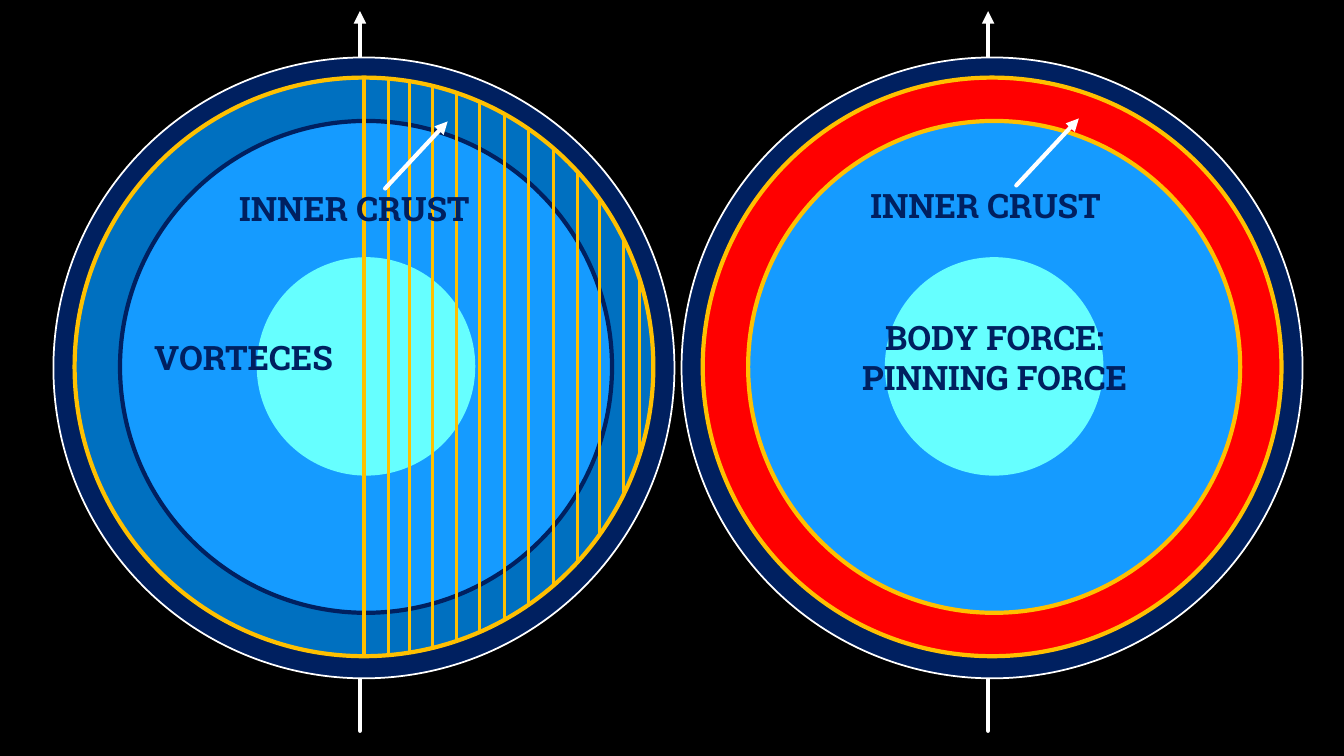
"""Build a slide comparing vortices and pinning force in a star's inner crust."""
import math
from dataclasses import dataclass

import pptx
import pptx.dml.color
import pptx.enum.dml
import pptx.enum.shapes
import pptx.enum.text
import pptx.oxml.ns
import pptx.oxml.xmlchemy
import pptx.slide
import pptx.util
from lxml import etree

COLOURS = {
    "space": "000000",
    "white": "FFFFFF",
    "navy": "002060",
    "crust": "0070C0",
    "force": "FF0000",
    "mantle": "159BFF",
    "core": "66FFFF",
    "gold": "FFC000",
}
CELL = pptx.util.Inches(0.01)
COLUMNS, ROWS = 1333, 750
LABEL_FONT = {"name": "Roboto Slab", "size": pptx.util.Pt(24), "bold": True}
LABEL_FRAME = {"word_wrap": True, "auto_size": pptx.enum.text.MSO_AUTO_SIZE.NONE}
CENTRE = pptx.enum.text.PP_ALIGN.CENTER
LEFT = pptx.enum.text.PP_ALIGN.LEFT
CRUST_CENTRE = (361, 364)
CRUST_RADIUS = 287
VORTEX_OFFSETS = (0, 24, 45, 68, 92, 115, 139, 163, 188, 212, 234, 257.5, 273)


@dataclass(frozen=True)
class Ring:
    column: float
    row: float
    diameter: float
    fill: str
    outline: str
    weight: float


@dataclass(frozen=True)
class Stroke:
    start: tuple[float, float]
    end: tuple[float, float]
    colour: str
    weight: float
    arrow: bool


@dataclass(frozen=True)
class Label:
    column: float
    row: float
    width: float
    height: float
    lines: tuple[str, ...]
    alignment: pptx.enum.text.PP_ALIGN


@dataclass(frozen=True)
class Star:
    shift: float
    crust_fill: str
    mantle_outline: str
    vortex_offsets: tuple[float, ...]
    caption: Label
    callout_shift: tuple[float, float]


STARS = (
    Star(0, "crust", "navy", VORTEX_OFFSETS,
         Label(143, 329, 229, 50, ("VORTECES",), LEFT), (0, 0)),
    Star(623, "force", "gold", (),
         Label(816, 309, 341, 91, ("BODY FORCE:", "PINNING FORCE"), CENTRE), (3, -3)),
)


def cells(*counts: float) -> list[int]:
    """Convert grid cells to slide lengths."""
    return [round(count * CELL) for count in counts]


def colour(name: str) -> pptx.dml.color.RGBColor:
    """Look up a named colour."""
    return pptx.dml.color.RGBColor.from_string(COLOURS[name])


def draw_ring(slide: pptx.slide.Slide, ring: Ring) -> None:
    """Draw one layer of a star."""
    layer = slide.shapes.add_shape(
        pptx.enum.shapes.MSO_SHAPE.OVAL,
        *cells(ring.column, ring.row, ring.diameter, ring.diameter))
    layer.shadow.inherit = False
    layer.fill.solid()
    layer.fill.fore_color.rgb = colour(ring.fill)
    layer.line.color.rgb = colour(ring.outline)
    layer.line.width = pptx.util.Pt(ring.weight)


def draw_stroke(slide: pptx.slide.Slide, stroke: Stroke) -> None:
    """Draw a straight line, with a round cap and head if it is an arrow."""
    connector = slide.shapes.add_connector(
        pptx.enum.shapes.MSO_CONNECTOR.STRAIGHT,
        *cells(*stroke.start, *stroke.end))
    connector.line.color.rgb = colour(stroke.colour)
    connector.line.width = pptx.util.Pt(stroke.weight)
    properties = connector.element.spPr
    if stroke.arrow:
        outline = properties.find(pptx.oxml.ns.qn("a:ln"))
        outline.set("cap", "rnd")
        etree.SubElement(outline, pptx.oxml.ns.qn("a:tailEnd"), type="triangle")
    etree.SubElement(properties, pptx.oxml.ns.qn("a:effectLst"))


def draw_label(slide: pptx.slide.Slide, label: Label) -> None:
    """Write a label, one paragraph per line."""
    frame = slide.shapes.add_textbox(
        *cells(label.column, label.row, label.width, label.height)).text_frame
    for attribute, value in LABEL_FRAME.items():
        setattr(frame, attribute, value)
    frame.text = "\n".join(label.lines)
    for paragraph in frame.paragraphs:
        paragraph.alignment = label.alignment
        for run in paragraph.runs:
            for attribute, value in LABEL_FONT.items():
                setattr(run.font, attribute, value)
            run.font.color.rgb = colour("navy")


def draw_star(slide: pptx.slide.Slide, star: Star) -> None:
    """Draw the axis, layers, vortices and labels of one star."""
    shift = star.shift
    axis = 357 + shift
    draw_stroke(slide, Stroke((axis, 725), (axis, 11), "white", 3, True))
    for ring in (
        Ring(53 + shift, 57, 616, "navy", "white", 1.25),
        Ring(74 + shift, 77, 2 * CRUST_RADIUS, star.crust_fill, "gold", 3),
        Ring(119 + shift, 120, 488, "mantle", star.mantle_outline, 3),
        Ring(255.5 + shift, 256, 215, "core", "core", 1.25),
    ):
        draw_ring(slide, ring)
    middle_column, middle_row = CRUST_CENTRE
    for offset in star.vortex_offsets:
        column = middle_column + shift + offset
        reach = math.sqrt(CRUST_RADIUS**2 - offset**2)
        draw_stroke(slide, Stroke((column, middle_row - reach),
                                  (column, middle_row + reach), "gold", 2.25, False))
    draw_label(slide, star.caption)
    right, down = shift + star.callout_shift[0], star.callout_shift[1]
    draw_label(slide, Label(181 + right, 182 + down, 341, 50, ("INNER CRUST",), CENTRE))
    draw_stroke(slide, Stroke((382 + right, 187 + down), (444 + right, 120.5 + down),
                              "white", 3, True))


def main() -> None:
    """Create and save the presentation."""
    deck = pptx.Presentation()
    deck.slide_width, deck.slide_height = cells(COLUMNS, ROWS)
    slide = deck.slides.add_slide(deck.slide_layouts[6])
    slide.background.fill.solid()
    slide.background.fill.fore_color.rgb = colour("space")
    for star in STARS:
        draw_star(slide, star)
    deck.save("out.pptx")


if __name__ == "__main__":
    main()
